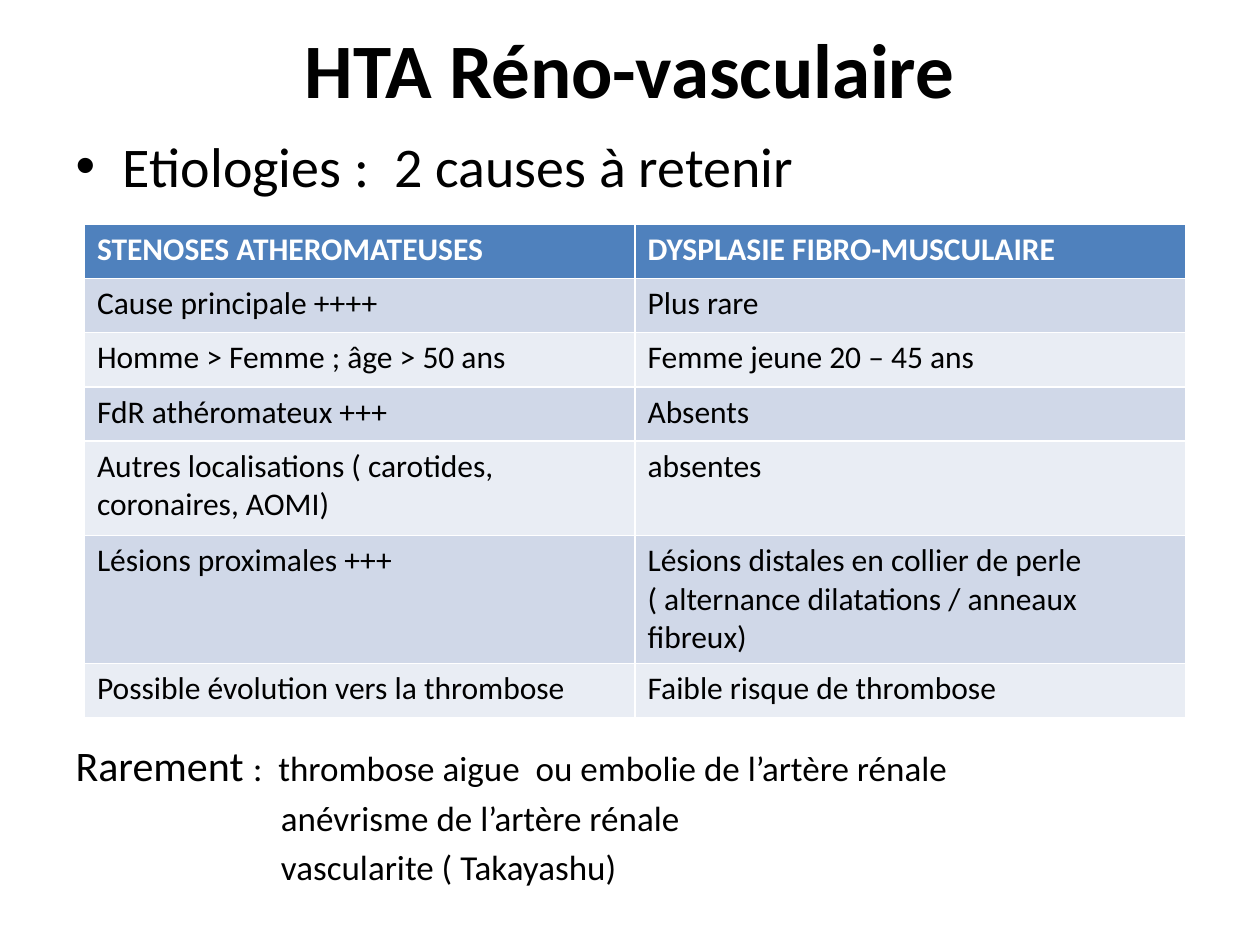
from lxml import etree
from pptx import Presentation
from pptx.dml.color import RGBColor
from pptx.enum.text import MSO_AUTO_SIZE
from pptx.oxml.ns import qn
from pptx.util import Inches, Pt

NO_AUTOFIT = MSO_AUTO_SIZE.NONE
BLACK = RGBColor(0x00, 0x00, 0x00)
WHITE = RGBColor(0xFF, 0xFF, 0xFF)
HEADER_BLUE = RGBColor(0x4F, 0x81, 0xBD)
BANDS = (RGBColor(0xE9, 0xED, 0xF4), RGBColor(0xD0, 0xD8, 0xE8))
FONT = "Calibri"

# Content
TITLE = "HTA Réno-vasculaire"
HEADING = "Etiologies :  2 causes à retenir"
RARE_LABEL = "Rarement "
RARE_CAUSES = [
    ":  thrombose aigue  ou embolie de l’artère rénale",
    "anévrisme de l’artère rénale",
    "vascularite ( Takayashu)",
]
CAUSES = [
    ("STENOSES ATHEROMATEUSES", "DYSPLASIE FIBRO-MUSCULAIRE"),
    ("Cause principale ++++", "Plus rare"),
    ("Homme > Femme ; âge > 50 ans", "Femme jeune 20 – 45 ans"),
    ("FdR athéromateux +++", "Absents"),
    ("Autres localisations ( carotides, coronaires, AOMI)", "absentes"),
    ("Lésions proximales +++",
     "Lésions distales en collier de perle ( alternance dilatations / anneaux fibreux)"),
    ("Possible évolution vers la thrombose", "Faible risque de thrombose"),
]

# Layout, in inches
TITLE_BOX = (0.5, 0, 9, 1.07)
BODY_BOX = (0.5, 0.99, 9, 6.14)
TABLE_LEFT, TABLE_TOP, COLUMN_WIDTH = 0.67, 1.78, 4.37
ROW_HEIGHT, TALL_ROW_HEIGHT, TALL_ROWS = 0.43, 0.75, (4, 5)
RARE_INDENT = 1.63
TABLE_GAP = Pt(309)  # room for the table between the two body parts


def place(shape, box):
    shape.left, shape.top, shape.width, shape.height = map(Inches, box)
    shape.text_frame.auto_size = NO_AUTOFIT


def style(run, size, color=BLACK, bold=False):
    run.font.name, run.font.size, run.font.bold = FONT, Pt(size), bold
    run.font.color.rgb = color


def add_run(paragraph, text, size):
    run = paragraph.add_run()
    run.text = text
    style(run, size)


def remove_bullet(paragraph, indent):
    properties = paragraph._p.get_or_add_pPr()
    properties.set("marL", str(Inches(indent)))
    properties.set("indent", "0")
    etree.SubElement(properties, qn("a:buNone"))


prs = Presentation()
prs.slide_width, prs.slide_height = Inches(10), Inches(7.5)
slide = prs.slides.add_slide(prs.slide_layouts[1])
title, body = slide.placeholders

# Title
place(title, TITLE_BOX)
title.text_frame.text = TITLE
style(title.text_frame.paragraphs[0].runs[0], 44, bold=True)

# Heading above the table, rare causes below it
place(body, BODY_BOX)
body.text_frame.text = HEADING
style(body.text_frame.paragraphs[0].runs[0], 32)
for i, cause in enumerate(RARE_CAUSES):
    paragraph = body.text_frame.add_paragraph()
    if i == 0:
        paragraph.space_before = TABLE_GAP
        add_run(paragraph, RARE_LABEL, 24)
    add_run(paragraph, cause, 20)
    remove_bullet(paragraph, RARE_INDENT if i else 0)

# Comparison table
heights = [TALL_ROW_HEIGHT if r in TALL_ROWS else ROW_HEIGHT for r in range(len(CAUSES))]
columns = len(CAUSES[0])
table = slide.shapes.add_table(
    len(CAUSES), columns, Inches(TABLE_LEFT), Inches(TABLE_TOP),
    Inches(columns * COLUMN_WIDTH), Inches(sum(heights))).table
for r, (texts, height) in enumerate(zip(CAUSES, heights)):
    header = r == 0
    table.rows[r].height = Inches(height)
    for c, text in enumerate(texts):
        cell = table.cell(r, c)
        cell.fill.solid()
        cell.fill.fore_color.rgb = HEADER_BLUE if header else BANDS[r % 2]
        cell.text_frame.text = text
        style(cell.text_frame.paragraphs[0].runs[0], 18, WHITE if header else BLACK, header)

prs.save("out.pptx")
